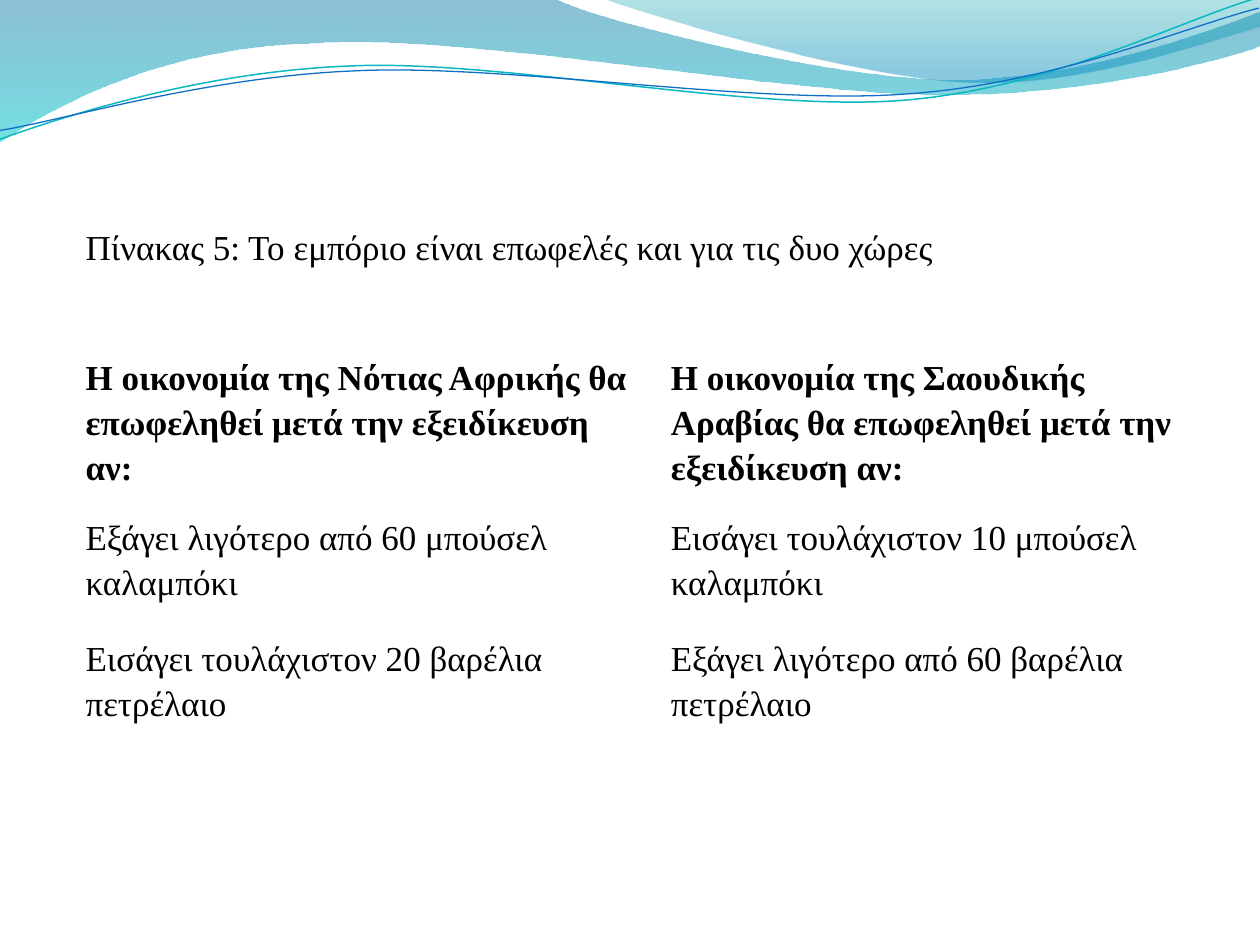
from lxml.etree import SubElement
from pptx import Presentation
from pptx.dml.color import RGBColor
from pptx.enum.text import MSO_ANCHOR
from pptx.oxml.ns import qn
from pptx.util import Inches, Pt

BLACK = RGBColor(0x00, 0x00, 0x00)
DEEP_BLUE = RGBColor(0x00, 0x74, 0xA1)
CYAN = RGBColor(0x00, 0xC6, 0xCF)
TEAL = RGBColor(0x00, 0xA1, 0xA9)
SKY_BLUE = RGBColor(0x00, 0x8B, 0xBF)
LINE_TEAL = RGBColor(0x0A, 0xB8, 0xBF)
LINE_BLUE = RGBColor(0x0F, 0x6F, 0xC6)

FONT = "Times New Roman"
WAVE_ROTATION = 357.3

# Each outline is a start point and segments: 2 numbers for a line, 6 for a cubic curve
BANDS = [
    ((0, 0), [(4.4, -0.01), (4.76, 0.17, 6.64, 0.63, 7.58, 0.63),
              (8.53, 0.63, 9.58, 0.26, 10, 0.09), (10.01, 0.36),
              (9.83, 0.44, 8.7, 0.76, 7.46, 0.75), (6.22, 0.75, 3.82, 0.28, 2.57, 0.34),
              (1.29, 0.36, 0.46, 0.83, -0.01, 1.13), (0, 0)],
     [(0, DEEP_BLUE, 45), (1, CYAN, 55)]),
    ((4.79, -0.01), [(5.09, 0.11, 6.82, 0.62, 7.69, 0.65),
                     (8.56, 0.69, 9.61, 0.32, 10, 0.21), (10, 0), (4.79, -0.01)],
     [(0, TEAL, 30), (0.8, SKY_BLUE, 45)]),
]
# Waves are given before their rotation
WAVES = [
    ((-0.02, 0.87), [(0.47, 0.72, 1.58, 0.41, 2.78, 0.42), (3.96, 0.42, 5.91, 0.93, 7.12, 0.9),
                     (8.32, 0.87, 9.4, 0.36, 10, 0.22)], LINE_TEAL, 0.85),
    ((-0.02, 0.8), [(0.46, 0.75, 1.64, 0.45, 2.83, 0.46), (4.03, 0.46, 5.96, 0.88, 7.16, 0.85),
                    (8.35, 0.83, 9.42, 0.42, 10.01, 0.3)], LINE_BLUE, 0.75),
]

CAPTION = "Πίνακας 5: Το εμπόριο είναι επωφελές και για τις δυο χώρες"
COUNTRY_ROWS = [
    ("Η οικονομία της Νότιας Αφρικής θα επωφεληθεί μετά την εξειδίκευση αν:",
     "Η οικονομία της Σαουδικής Αραβίας θα επωφεληθεί μετά την εξειδίκευση αν:"),
    ("Εξάγει λιγότερο από 60 μπούσελ καλαμπόκι",
     "Εισάγει τουλάχιστον 10 μπούσελ καλαμπόκι"),
    ("Εισάγει τουλάχιστον 20 βαρέλια πετρέλαιο",
     "Εξάγει λιγότερο από 60 βαρέλια πετρέλαιο"),
]
ROW_HEIGHTS = [0.96, 1.52, 0.96, 0.96]
CELL_FORMAT = {
    "margin_left": Inches(0.17), "margin_right": Inches(0.17),
    "margin_top": Inches(0.08), "margin_bottom": Inches(0.08),
}
PARAGRAPH_FORMAT = {"line_spacing": 1.15, "space_after": Pt(7.6)}


def add_outline(slide, left, top, start, segments, close):
    """Build the outline through every point, then turn point triples into curves."""
    numbers = [number for segment in (start, *segments) for number in segment]
    points = [(left + Inches(x), top + Inches(y))
              for x, y in zip(numbers[::2], numbers[1::2])]
    builder = slide.shapes.build_freeform(*points[0])
    builder.add_line_segments(points[1:], close=close)
    outline = builder.convert_to_shape()
    outline.shadow.inherit = False

    lines = iter(list(outline.element.spPr.iter(qn("a:lnTo"))))
    for segment in segments:
        first = next(lines)
        if len(segment) == 6:
            first.tag = qn("a:cubicBezTo")
            for _ in range(2):
                extra = next(lines)
                first.append(extra[0])
                extra.getparent().remove(extra)
    return outline


def add_wave_header(slide, left, top):
    # Translucent gradient bands
    for start, segments, stops in BANDS:
        band = add_outline(slide, left, top, start, segments, True)
        band.line.fill.background()
        band.fill.gradient()
        band.fill.gradient_angle = 270
        for stop, (position, color, _) in zip(band.fill.gradient_stops, stops):
            stop.position = position
            stop.color.rgb = color
        for color_element, (_, _, opacity) in zip(
                band.element.spPr.iter(qn("a:srgbClr")), stops):
            SubElement(color_element, qn("a:alpha"), val=str(opacity * 1000))

    # Thin wave lines
    for start, segments, color, width in WAVES:
        wave = add_outline(slide, left, top, start, segments, False)
        wave.rotation = WAVE_ROTATION
        wave.fill.background()
        wave.line.color.rgb = color
        wave.line.width = Pt(width)


def fill_cell(cell, text, anchor=MSO_ANCHOR.MIDDLE, bold=False):
    cell.fill.background()
    cell.vertical_anchor = anchor
    for name, value in CELL_FORMAT.items():
        setattr(cell, name, value)
    paragraph = cell.text_frame.paragraphs[0]
    for name, value in PARAGRAPH_FORMAT.items():
        setattr(paragraph, name, value)
    run = paragraph.add_run()
    run.text = text
    for name, value in {"name": FONT, "size": Pt(20), "bold": bold}.items():
        setattr(run.font, name, value)
    run.font.color.rgb = BLACK


def add_trade_table(slide, left, top, width, height):
    table = slide.shapes.add_table(len(ROW_HEIGHTS), 2, left, top, width, height).table
    table.first_row = False
    table.horz_banding = False
    for row, row_height in zip(table.rows, ROW_HEIGHTS):
        row.height = Inches(row_height)

    # Caption across both columns
    caption = table.cell(0, 0)
    caption.merge(table.cell(0, 1))
    table.cell(0, 1).fill.background()
    fill_cell(caption, CAPTION)

    # Country headings and their conditions
    for row, texts in enumerate(COUNTRY_ROWS, start=1):
        heading = row == 1
        anchor = MSO_ANCHOR.BOTTOM if heading else MSO_ANCHOR.MIDDLE
        for column, text in enumerate(texts):
            fill_cell(table.cell(row, column), text, anchor, heading)


def main():
    presentation = Presentation()
    presentation.slide_width = Inches(10)
    presentation.slide_height = Inches(7.5)
    slide = presentation.slides.add_slide(presentation.slide_layouts[6])
    add_wave_header(slide, Inches(0), Inches(0))
    add_trade_table(slide, Inches(0.51), Inches(1.47), Inches(9.29), Inches(4.41))
    presentation.save("out.pptx")


if __name__ == "__main__":
    main()
